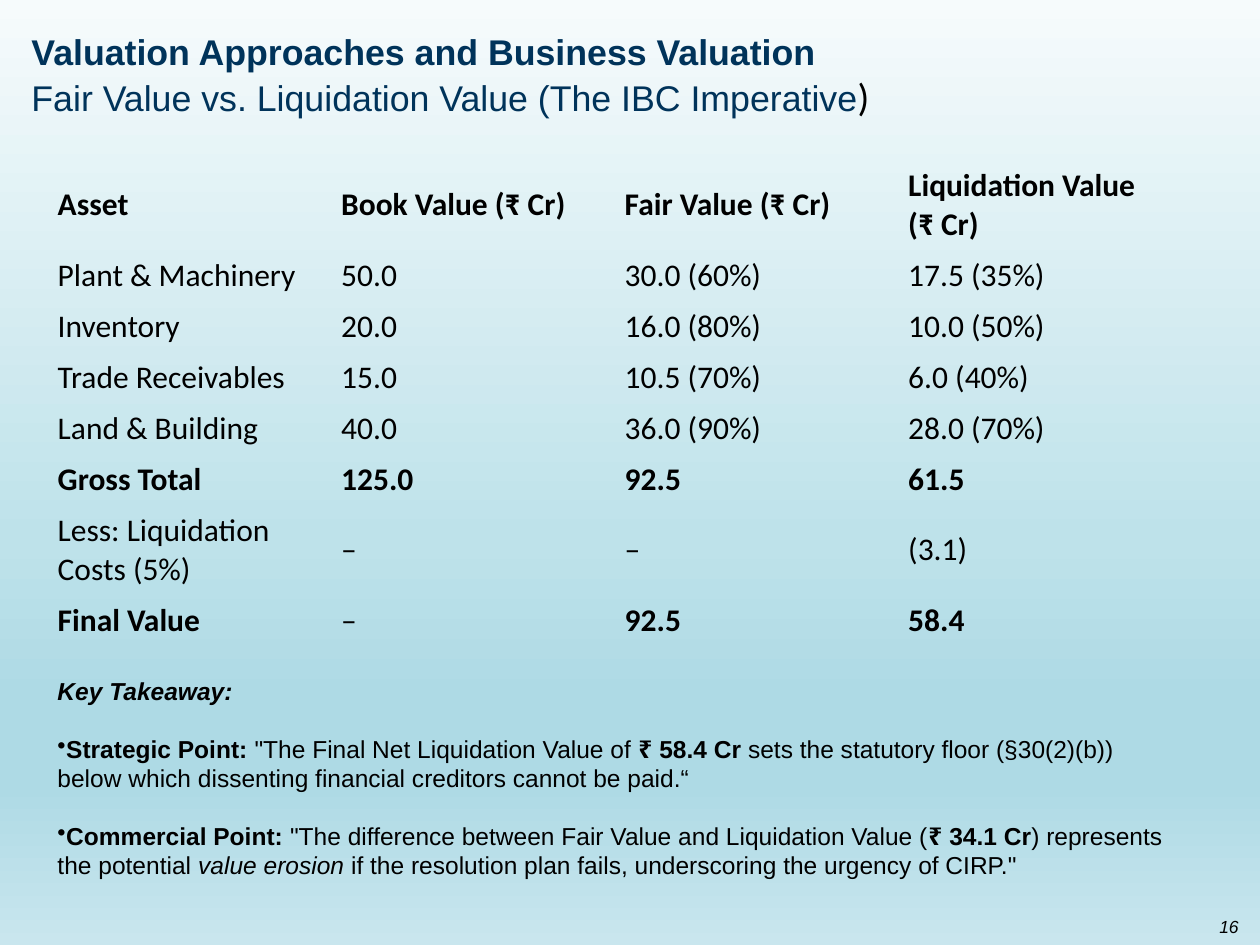
from lxml.etree import SubElement
from pptx import Presentation
from pptx.dml.color import RGBColor
from pptx.enum.text import MSO_ANCHOR as Anchor, MSO_AUTO_SIZE as AutoSize, PP_ALIGN as Align
from pptx.oxml.ns import qn
from pptx.util import Cm, Pt

COLORS = {"title": "00335A", "text": "000000"}
GRADIENT = [(0, "F6FBFC"), (57, "BEE2EA"), (74, "AEDAE5"), (83, "AEDAE5"), (100, "C9E6EE")]
NO_GRID_STYLE = "{2D5ABB26-0587-4C30-8999-92F81FD0307C}"

# Content: a run is (text, format)
BOLD, ITALIC, PLAIN = {"bold": True}, {"italic": True}, {}
TITLE = [
    [("Valuation Approaches and Business Valuation", BOLD)],
    [("Fair Value vs. Liquidation Value (The IBC Imperative", PLAIN),
     (")", {"font": "Calibri", "size": 22.2, "color": "text"})],
]
ROWS = [
    ("Asset", "Book Value (₹ Cr)", "Fair Value (₹ Cr)", "Liquidation Value (₹ Cr)"),
    ("Plant & Machinery", "50.0", "30.0 (60%)", "17.5 (35%)"),
    ("Inventory", "20.0", "16.0 (80%)", "10.0 (50%)"),
    ("Trade Receivables", "15.0", "10.5 (70%)", "6.0 (40%)"),
    ("Land & Building", "40.0", "36.0 (90%)", "28.0 (70%)"),
    ("Gross Total", "125.0", "92.5", "61.5"),
    ("Less: Liquidation Costs (5%)", "–", "–", "(3.1)"),
    ("Final Value", "–", "92.5", "58.4"),
]
BOLD_ROWS = {"Asset", "Gross Total", "Final Value"}
TALL_ROWS = {"Asset", "Less: Liquidation Costs (5%)"}
HEADING = [("Key Takeaway:", {"bold": True, "italic": True})]
POINTS = [
    [("Strategic Point:", BOLD), (' "The Final Net Liquidation Value of ', PLAIN),
     ("₹ 58.4 Cr", BOLD),
     (" sets the statutory floor (§30(2)(b)) below which dissenting financial creditors"
      " cannot be paid.“", PLAIN)],
    [("Commercial Point:", BOLD),
     (' "The difference between Fair Value and Liquidation Value (', PLAIN),
     ("₹ 34.1 Cr", BOLD), (") represents the potential ", PLAIN), ("value erosion", ITALIC),
     (' if the resolution plan fails, underscoring the urgency of CIRP."', PLAIN)],
]


def add_text(paragraph, text, font="Arial", size=14, color="text", bold=False, italic=False):
    run = paragraph.add_run()
    run.text = text
    run.font.name, run.font.size = font, Pt(size)
    run.font.bold, run.font.italic = bold, italic
    run.font.color.rgb = RGBColor.from_string(COLORS[color])


def fill_frame(frame, paragraphs, align=Align.LEFT, gap=0, bulleted_from=None, **base):
    for index, runs in enumerate(paragraphs):
        paragraph = frame.add_paragraph() if index else frame.paragraphs[0]
        paragraph.alignment = align
        if index and gap:
            paragraph.space_before = Pt(gap)
        if bulleted_from is not None and index >= bulleted_from:
            properties = paragraph._p.get_or_add_pPr()
            properties.set("marL", "0")
            properties.set("indent", "0")
            SubElement(properties, qn("a:buChar"), char="•")
        for text, style in runs:
            add_text(paragraph, text, **{**base, **style})


def add_box(slide, left, top, width, height, anchor):
    frame = slide.shapes.add_textbox(Cm(left), Cm(top), Cm(width), Cm(height)).text_frame
    frame.word_wrap = True
    frame.vertical_anchor = anchor
    return frame


presentation = Presentation()
presentation.slide_width, presentation.slide_height = Cm(25.4), Cm(19.05)
slide = presentation.slides.add_slide(presentation.slide_layouts[5])

# Background gradient, top to bottom
background = slide.background.fill
background.gradient()
background.gradient_angle = 270
stops = slide.element.find(".//" + qn("a:gsLst"))
for stop in list(stops):
    stops.remove(stop)
for position, color in GRADIENT:
    stop = SubElement(stops, qn("a:gs"), pos=str(position * 1000))
    SubElement(stop, qn("a:srgbClr"), val=color)

# Title
title = slide.shapes.title
title.left, title.top, title.width, title.height = Cm(0.38), Cm(0.1), Cm(24.61), Cm(2.79)
title.text_frame.auto_size = AutoSize.NONE
title.text_frame.vertical_anchor = Anchor.MIDDLE
fill_frame(title.text_frame, TITLE, size=20.4, color="title")

# Valuation table
table_shape = slide.shapes.add_table(len(ROWS), len(ROWS[0]), Cm(0.91), Cm(3.23), Cm(22.86), Cm(9.78))
table = table_shape.table
table.first_row = table.horz_banding = False
table_shape._element.find(".//" + qn("a:tableStyleId")).text = NO_GRID_STYLE
for row, values in zip(table.rows, ROWS):
    row.height = Cm(1.8 if values[0] in TALL_ROWS else 1.03)
    for cell, value in zip(row.cells, values):
        cell.fill.background()
        cell.vertical_anchor = Anchor.MIDDLE
        bold = values[0] in BOLD_ROWS and value != "–"
        fill_frame(cell.text_frame, [[(value, PLAIN)]], font="Calibri", size=18, bold=bold)

# Key takeaways
takeaways = add_box(slide, 0.91, 13.51, 23.19, 4.45, Anchor.TOP)
fill_frame(takeaways, [HEADING, *POINTS], gap=16, bulleted_from=1)

# Slide number
number = add_box(slide, 19.3, 18.16, 5.92, 1.02, Anchor.MIDDLE)
fill_frame(number, [[("16", ITALIC)]], align=Align.RIGHT, size=10)

presentation.save("out.pptx")
